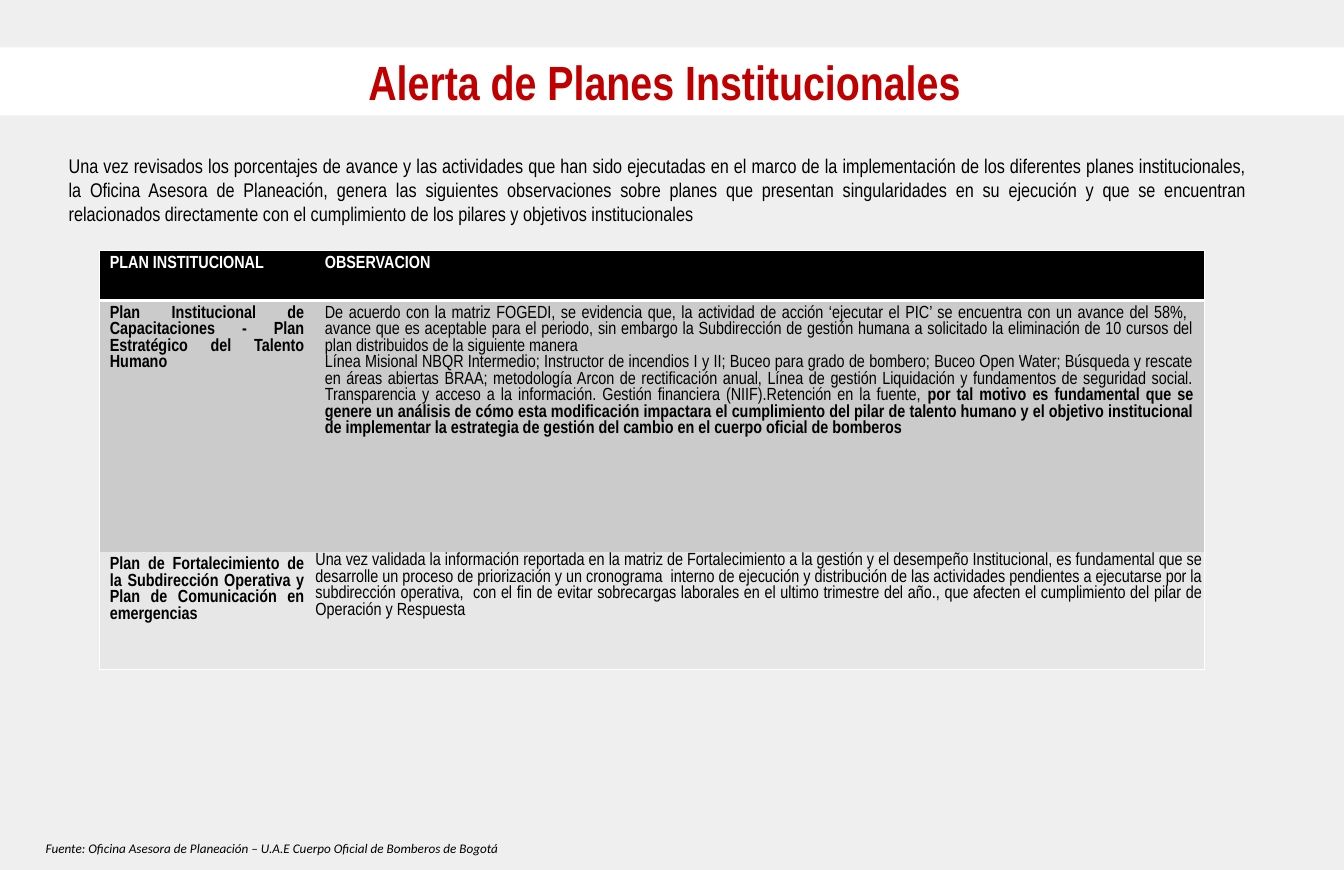
from lxml import etree
from pptx import Presentation
from pptx.dml.color import RGBColor
from pptx.enum.shapes import MSO_SHAPE
from pptx.enum.text import MSO_ANCHOR, PP_ALIGN
from pptx.oxml.ns import qn
from pptx.util import Pt

PX = 9144  # EMU, 100 px to the inch
TITLE_ONLY = 5
RECTANGLE = MSO_SHAPE.RECTANGLE
TOP, MIDDLE = MSO_ANCHOR.TOP, MSO_ANCHOR.MIDDLE
LEFT, CENTER, JUSTIFY = PP_ALIGN.LEFT, PP_ALIGN.CENTER, PP_ALIGN.JUSTIFY

WHITE = RGBColor(0xFF, 0xFF, 0xFF)
BLACK = RGBColor(0x00, 0x00, 0x00)
RED = RGBColor(0xC0, 0x00, 0x00)
PAGE_GRAY = RGBColor(0xEF, 0xEF, 0xEF)
DARK_BAND = RGBColor(0xCB, 0xCB, 0xCB)
LIGHT_BAND = RGBColor(0xE7, 0xE7, 0xE7)

INTRO = (
    "Una vez revisados los porcentajes de avance y las actividades que han sido ejecutadas en el "
    "marco de la implementación de los diferentes planes institucionales, la Oficina Asesora de "
    "Planeación, genera las siguientes observaciones sobre planes que presentan singularidades en "
    "su ejecución y que se encuentran relacionados directamente con el cumplimiento de los pilares "
    "y objetivos institucionales ")
TRAINING_PLAN = "Plan Institucional de Capacitaciones - Plan Estratégico del Talento Humano "
TRAINING_STATUS = (
    "De acuerdo con la matriz FOGEDI, se evidencia que, la actividad de acción ‘ejecutar el PIC’ se "
    "encuentra con un avance del 58%,  avance que es aceptable para el periodo, sin embargo la "
    "Subdirección de gestión humana a solicitado la eliminación de 10 cursos del plan distribuidos "
    "de la siguiente manera ")
TRAINING_COURSES = (
    "Línea Misional NBQR Intermedio; Instructor de incendios I y II; Buceo para grado de bombero; "
    "Buceo Open Water; Búsqueda y rescate en áreas abiertas BRAA; metodología Arcon de "
    "rectificación anual, Línea de gestión Liquidación y fundamentos de seguridad social. "
    "Transparencia y acceso a la información. Gestión financiera (NIIF).Retención en la fuente, ")
TRAINING_REQUEST = (
    "por tal motivo es fundamental que se genere un análisis de cómo esta modificación impactara el "
    "cumplimiento del pilar de talento humano y el objetivo institucional de implementar la "
    "estrategia de gestión del cambio en el cuerpo oficial de bomberos ")
OPERATIONS_PLAN = (
    "Plan de Fortalecimiento de la Subdirección Operativa y Plan de Comunicación en emergencias ")
OPERATIONS_STATUS = (
    "Una vez validada la información reportada en la matriz de Fortalecimiento a la gestión y el "
    "desempeño Institucional, es fundamental que se desarrolle un proceso de priorización y un "
    "cronograma  interno de ejecución y distribución de las actividades pendientes a ejecutarse por "
    "la subdirección operativa,  con el fin de evitar sobrecargas laborales en el ultimo trimestre "
    "del año., que afecten el cumplimiento del pilar de Operación y Respuesta ")

# A cell is a list of paragraphs; a paragraph is a list of (text, bold) runs.
ROWS = [
    [[[("PLAN INSTITUCIONAL ", True)]], [[("OBSERVACION ", True)]]],
    [[[(TRAINING_PLAN, True)]],
     [[(TRAINING_STATUS, False)], [(TRAINING_COURSES, False), (TRAINING_REQUEST, True)]]],
    [[[(OPERATIONS_PLAN, True)]], [[(OPERATIONS_STATUS, False)]]],
]
ROW_FILLS = [BLACK, DARK_BAND, LIGHT_BAND]
ROW_RULES = [1, 3, 0, 1]  # points, above each row and below the last
COLUMN_RULES = [1, 0, 1]
CELL_INSETS = (13, 6, 13, 6)
TIGHT_INSETS = (1, 1, 1, 6)


class Page:
    font = "Arial Narrow"

    def __init__(self, deck):
        self.slide = deck.slides.add_slide(deck.slide_layouts[TITLE_ONLY])
        self.slide.background.fill.solid()
        self.slide.background.fill.fore_color.rgb = PAGE_GRAY

    def place(self, shape, box):
        shape.left, shape.top, shape.width, shape.height = (n * PX for n in box)

    def inset(self, frame, insets):
        """Set the margins of a text frame or a table cell."""
        (frame.margin_left, frame.margin_top,
         frame.margin_right, frame.margin_bottom) = (n * PX for n in insets)

    def style(self, paragraph, size, color, align, bold=None, italic=None, font=None):
        paragraph.alignment = align
        paragraph.font.name = font or self.font
        paragraph.font.size = Pt(size)
        paragraph.font.color.rgb = color
        paragraph.font.bold = bold
        paragraph.font.italic = italic

    def title(self, text, box):
        title = self.slide.shapes.title
        self.place(title, box)
        frame = title.text_frame
        frame.text = text
        frame.word_wrap = True
        frame.vertical_anchor = MIDDLE
        self.inset(frame, (12, 6, 12, 6))
        self.style(frame.paragraphs[0], 43.7, RED, CENTER, bold=True)

    def title_band(self, box):
        band = self.slide.shapes.add_shape(RECTANGLE, *(n * PX for n in box))
        band.shadow.inherit = False
        band.fill.solid()
        band.fill.fore_color.rgb = WHITE
        band.line.fill.background()
        self.slide.shapes.title.element.addprevious(band.element)

    def text(self, text, box, size, align, **look):
        frame = self.slide.shapes.add_textbox(*(n * PX for n in box)).text_frame
        frame.word_wrap = True
        frame.text = text
        self.style(frame.paragraphs[0], size, BLACK, align, **look)

    def borders(self, cell, widths):
        """Draw white borders in the order left, right, top, bottom; 0 is none."""
        properties = cell._tc.get_or_add_tcPr()
        for index, (side, width) in enumerate(zip("LRTB", widths)):
            line = etree.Element(qn(f"a:ln{side}"), w=str(Pt(width)))
            if width:
                fill = etree.SubElement(line, qn("a:solidFill"))
                etree.SubElement(fill, qn("a:srgbClr"), val=str(WHITE))
            else:
                etree.SubElement(line, qn("a:noFill"))
            properties.insert(index, line)

    def cell(self, cell, paragraphs, fill, color, insets):
        cell.fill.solid()
        cell.fill.fore_color.rgb = fill
        cell.vertical_anchor = TOP
        self.inset(cell, insets)
        frame = cell.text_frame
        for index, runs in enumerate(paragraphs):
            paragraph = frame.add_paragraph() if index else frame.paragraphs[0]
            self.style(paragraph, 16, color, JUSTIFY)
            for text, bold in runs:
                run = paragraph.add_run()
                run.text = text
                run.font.bold = bold

    def table(self, rows, left, top, widths, heights):
        box = (left, top, sum(widths), sum(heights))
        table = self.slide.shapes.add_table(
            len(rows), len(widths), *(n * PX for n in box)).table
        table.horz_banding = False
        for column, width in zip(table.columns, widths):
            column.width = width * PX
        for r, (row, height) in enumerate(zip(rows, heights)):
            table.rows[r].height = height * PX
            for c, paragraphs in enumerate(row):
                cell = table.cell(r, c)
                insets = TIGHT_INSETS if (r, c) == (2, 1) else CELL_INSETS
                self.cell(cell, paragraphs, ROW_FILLS[r], BLACK if r else WHITE, insets)
                self.borders(cell, COLUMN_RULES[c:c + 2] + ROW_RULES[r:r + 2])


def main():
    deck = Presentation()
    deck.slide_width, deck.slide_height = 1700 * PX, 1100 * PX
    page = Page(deck)
    page.title("Alerta de Planes Institucionales ", (157, 60, 1381, 86))
    page.title_band((0, 60, 1700, 86))
    page.text(INTRO, (77, 190, 1510, 101), 18, JUSTIFY)
    page.table(ROWS, 126, 317, widths=(272, 1125), heights=(63, 318, 148))
    page.text("Fuente: Oficina Asesora de Planeación – U.A.E Cuerpo Oficial de Bomberos de Bogotá",
              (48, 1058, 777, 30), 12, LEFT, italic=True, font="Calibri")
    deck.save("out.pptx")


if __name__ == "__main__":
    main()
